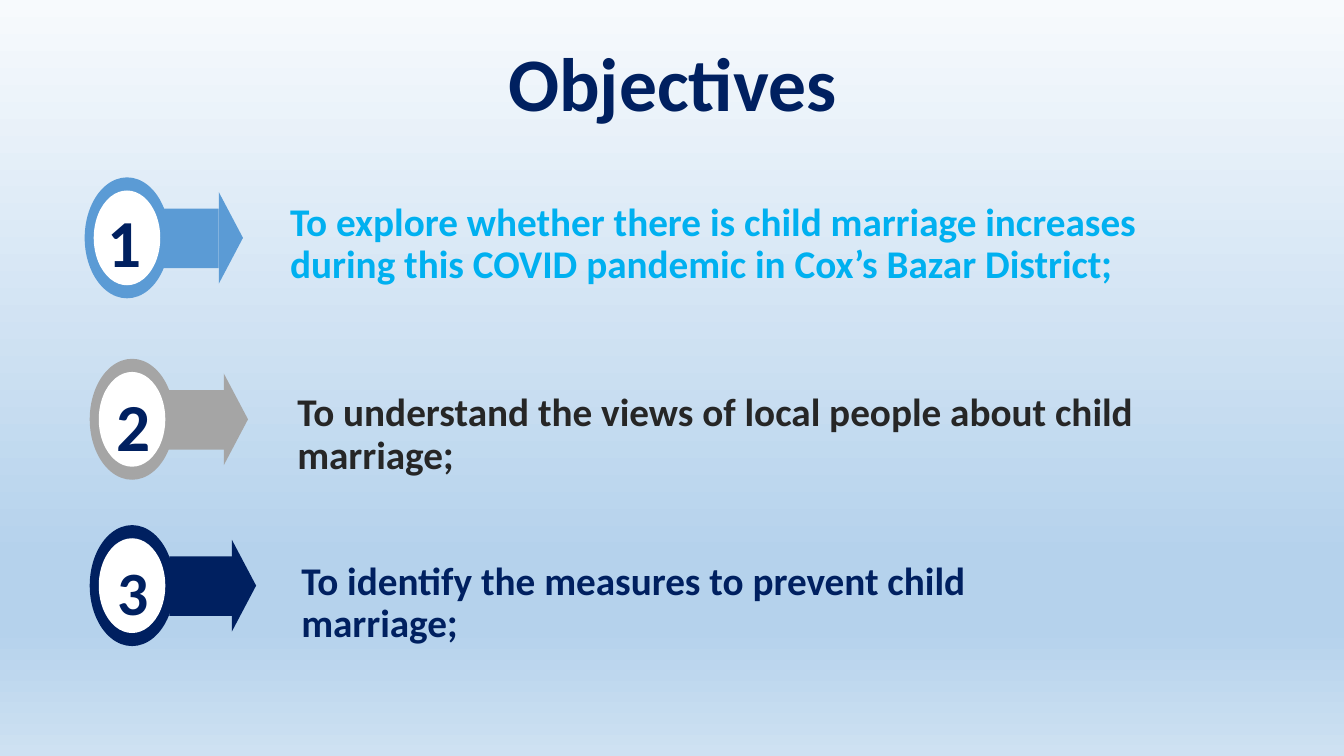
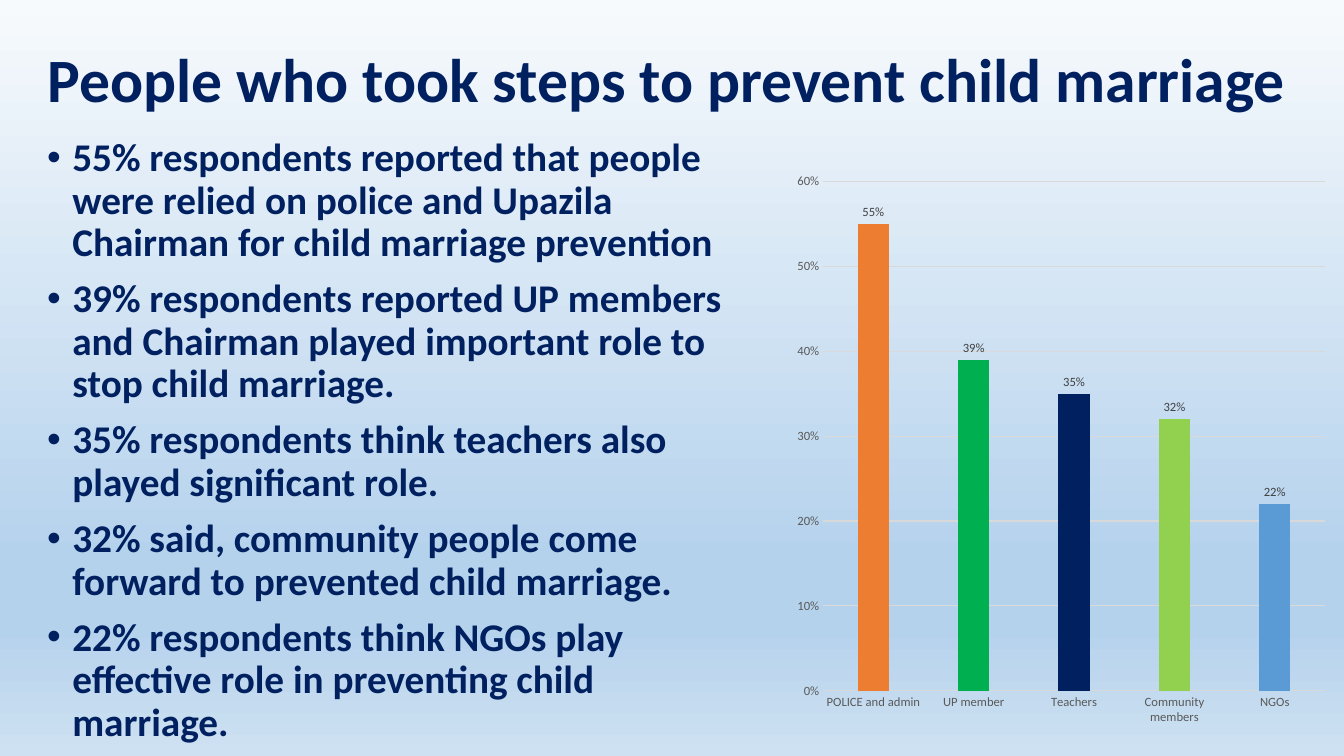
from dataclasses import dataclass

from lxml.etree import SubElement
from pptx import Presentation
from pptx.chart.data import CategoryChartData
from pptx.dml.color import RGBColor
from pptx.enum.chart import XL_CHART_TYPE as ChartType
from pptx.enum.chart import XL_LABEL_POSITION as LabelPosition
from pptx.enum.chart import XL_TICK_MARK as TickMark
from pptx.enum.shapes import MSO_SHAPE as Preset
from pptx.enum.text import MSO_ANCHOR as Anchor
from pptx.enum.text import MSO_AUTO_SIZE as AutoSize
from pptx.enum.text import PP_ALIGN as Align
from pptx.oxml.ns import qn
from pptx.presentation import Presentation as Deck
from pptx.slide import Slide
from pptx.text.text import Font, TextFrame
from pptx.util import Inches, Pt

NAVY = RGBColor(0x00, 0x20, 0x60)
SKY = RGBColor(0x00, 0xB0, 0xF0)
BLUE = RGBColor(0x5B, 0x9B, 0xD5)
GRAY = RGBColor(0xA5, 0xA5, 0xA5)
CHARCOAL = RGBColor(0x26, 0x26, 0x26)
WHITE = RGBColor(0xFF, 0xFF, 0xFF)
ORANGE = RGBColor(0xED, 0x7D, 0x31)
GREEN = RGBColor(0x00, 0xB0, 0x50)
LIME = RGBColor(0x92, 0xD0, 0x50)
GRID = RGBColor(0xD9, 0xD9, 0xD9)
AXIS_TEXT = RGBColor(0x59, 0x59, 0x59)
LABEL_TEXT = RGBColor(0x40, 0x40, 0x40)
BLACK = RGBColor(0x00, 0x00, 0x00)

PALE = RGBColor(0xF7, 0xFA, 0xFD)
MIST = RGBColor(0xB5, 0xD2, 0xEC)
HAZE = RGBColor(0xCE, 0xE1, 0xF2)
BACKGROUND_STOPS = [(0, PALE), (74, MIST), (83, MIST), (100, HAZE)]

FONT = "Calibri"
BODY_SIZE = 28
TITLE_ONLY = 5


@dataclass(frozen=True)
class Rect:
    left: float
    top: float
    width: float
    height: float

    def lengths(self) -> tuple[Inches, Inches, Inches, Inches]:
        return (Inches(self.left), Inches(self.top),
                Inches(self.width), Inches(self.height))


@dataclass(frozen=True)
class Objective:
    text: str
    text_box: Rect
    text_color: RGBColor
    number_left: float
    number_top: float
    number_size: int
    badge_left: float
    badge_top: float
    shaft_left: float
    shaft_right: float
    badge_color: RGBColor


@dataclass(frozen=True)
class Share:
    group: str
    value: float
    color: RGBColor
    finding: str


OBJECTIVES = [
    Objective(
        "To explore whether there is child marriage increases during this "
        "COVID pandemic in Cox’s Bazar District",
        Rect(2.78, 1.96, 9.27, 1.07), SKY,
        0.84, 2.07, 48, 0.84, 1.76, 1.57, 2.17, BLUE),
    Objective(
        "To understand the views of local people about child marriage",
        Rect(2.85, 3.85, 9.88, 0.82), CHARCOAL,
        0.92, 3.9, 48, 0.89, 3.56, 1.62, 2.22, GRAY),
    Objective(
        "To identify the measures to prevent child marriage",
        Rect(2.89, 5.52, 7, 0.81), NAVY,
        0.92, 5.54, 44, 0.89, 5.21, 1.68, 2.3, NAVY),
]

SHARES = [
    Share("POLICE and admin", 0.55, ORANGE,
          "55% respondents reported that people were relied on police and "
          "Upazila Chairman for child marriage prevention"),
    Share("UP member", 0.39, GREEN,
          "39% respondents reported UP members and Chairman played "
          "important role to stop child marriage."),
    Share("Teachers", 0.35, NAVY,
          "35% respondents think teachers also played significant role."),
    Share("Community members", 0.32, LIME,
          "32% said, community people come forward to prevented child "
          "marriage."),
    Share("NGOs", 0.22, BLUE,
          "22% respondents think NGOs play effective role in preventing "
          "child marriage."),
]


def style_font(font: Font, size: float, color: RGBColor,
               bold: bool = False, name: str = FONT) -> None:
    font.name = name
    font.size = Pt(size)
    font.bold = bold
    font.color.rgb = color


def write_text(frame: TextFrame, text: str, size: float, color: RGBColor,
               align: Align = Align.LEFT, anchor: Anchor = Anchor.TOP,
               space_before: float = 0) -> None:
    frame.text = text
    frame.word_wrap = True
    frame.auto_size = AutoSize.NONE
    frame.vertical_anchor = anchor
    for para in frame.paragraphs:
        para.alignment = align
        para.line_spacing = 0.9
        para.space_before = Pt(space_before)
        for span in para.runs:
            style_font(span.font, size, color, bold=True)


def add_text(page: Slide, rect: Rect, text: str, size: float,
             color: RGBColor, align: Align = Align.LEFT,
             anchor: Anchor = Anchor.TOP, space_before: float = 0) -> TextFrame:
    frame = page.shapes.add_textbox(*rect.lengths()).text_frame
    write_text(frame, text, size, color, align, anchor, space_before)
    return frame


def add_figure(page: Slide, preset: Preset, rect: Rect, color: RGBColor,
               rotation: float = 0) -> None:
    figure = page.shapes.add_shape(preset, *rect.lengths())
    figure.shadow.inherit = False
    figure.fill.solid()
    figure.fill.fore_color.rgb = color
    figure.line.fill.background()
    figure.rotation = rotation


def set_background(deck: Deck) -> None:
    master = deck.slide_master
    fill = master.background.fill
    fill.gradient()
    fill.gradient_angle = 270
    stops = master.element.find(".//" + qn("a:gsLst"))
    stops.clear()
    for percent, color in BACKGROUND_STOPS:
        stop = SubElement(stops, qn("a:gs"), pos=str(percent * 1000))
        SubElement(stop, qn("a:srgbClr"), val=str(color))


def add_page(deck: Deck, title: str, rect: Rect, size: float,
             align: Align) -> Slide:
    page = deck.slides.add_slide(deck.slide_layouts[TITLE_ONLY])
    box = page.shapes.title
    box.left, box.top, box.width, box.height = rect.lengths()
    write_text(box.text_frame, title, size, NAVY, align, Anchor.MIDDLE)
    return page


def add_objective(page: Slide, number: int, item: Objective) -> None:
    left, top = item.badge_left, item.badge_top
    middle = top + 0.6
    head_length, head_span = 0.24, 0.91
    head_left = item.shaft_right + (head_length - head_span) / 2
    add_figure(page, Preset.OVAL, Rect(left, top, 0.84, 1.2),
               item.badge_color)
    add_figure(page, Preset.RECTANGLE,
               Rect(item.shaft_left, middle - 0.29,
                    item.shaft_right - item.shaft_left, 0.59),
               item.badge_color)
    add_figure(page, Preset.ISOSCELES_TRIANGLE,
               Rect(head_left, middle - head_length / 2,
                    head_span, head_length),
               item.badge_color, rotation=90)
    add_figure(page, Preset.OVAL,
               Rect(left + 0.09, top + 0.13, 0.66, 0.94), WHITE)
    add_text(page, Rect(item.number_left, item.number_top, 0.8, 0.73),
             str(number), item.number_size, NAVY, Align.CENTER, Anchor.MIDDLE)
    frame = add_text(page, item.text_box, item.text, BODY_SIZE,
                     item.text_color, space_before=10)
    ending = frame.paragraphs[0].add_run()
    ending.text = ";"
    style_font(ending.font, BODY_SIZE, item.text_color, True, "Lato")


def add_findings(page: Slide) -> None:
    text = "\n".join(share.finding for share in SHARES)
    frame = add_text(page, Rect(0.37, 1.32, 6.97, 6.18), text, BODY_SIZE,
                     NAVY, space_before=10)
    for para in frame.paragraphs:
        properties = para._p.get_or_add_pPr()
        properties.set("marL", str(Inches(0.25)))
        properties.set("indent", str(-Inches(0.25)))
        SubElement(properties, qn("a:buFont"), typeface="Arial")
        SubElement(properties, qn("a:buChar"), char="•")


def add_share_chart(page: Slide) -> None:
    data = CategoryChartData(number_format="0%")
    data.categories = [share.group for share in SHARES]
    data.add_series("Series 1", [share.value for share in SHARES])
    chart = page.shapes.add_chart(
        ChartType.COLUMN_CLUSTERED,
        *Rect(7.8, 1.61, 5.45, 5.69).lengths(), data).chart
    chart.has_title = False
    chart.has_legend = False
    style_font(chart.font, 10, BLACK)

    for axis in (chart.category_axis, chart.value_axis):
        axis.major_tick_mark = TickMark.NONE
        axis.minor_tick_mark = TickMark.NONE
        style_font(axis.tick_labels.font, 9, AXIS_TEXT)
    values = chart.value_axis
    values.minimum_scale, values.maximum_scale = 0, 0.6
    values.major_unit = 0.1
    values.tick_labels.number_format = "0%"
    values.tick_labels.number_format_is_linked = False
    values.format.line.fill.background()
    values.has_major_gridlines = True
    for line in (chart.category_axis.format.line,
                 values.major_gridlines.format.line):
        line.color.rgb = GRID
        line.width = Pt(0.75)

    plot = chart.plots[0]
    plot.gap_width = 219
    plot.overlap = -27
    plot.vary_by_categories = False
    series = plot.series[0]
    series.format.fill.solid()
    series.format.fill.fore_color.rgb = BLUE
    for index, share in enumerate(SHARES):
        fill = series.points[index].format.fill
        fill.solid()
        fill.fore_color.rgb = share.color
    labels = series.data_labels
    labels.show_value = True
    labels.position = LabelPosition.OUTSIDE_END
    labels.number_format = "0%"
    labels.number_format_is_linked = False
    style_font(labels.font, 9, LABEL_TEXT)


def main() -> None:
    deck = Presentation()
    deck.slide_width = Inches(13.33)
    deck.slide_height = Inches(7.5)
    set_background(deck)

    objectives = add_page(deck, "Objectives", Rect(0.92, 0.4, 11.5, 0.93),
                          54, Align.CENTER)
    for number, item in enumerate(OBJECTIVES, start=1):
        add_objective(objectives, number, item)

    prevention = add_page(
        deck, "People who took steps to prevent child marriage",
        Rect(0.37, 0.32, 12.77, 1), 44, Align.LEFT)
    add_findings(prevention)
    add_share_chart(prevention)

    deck.save("out.pptx")


if __name__ == "__main__":
    main()
